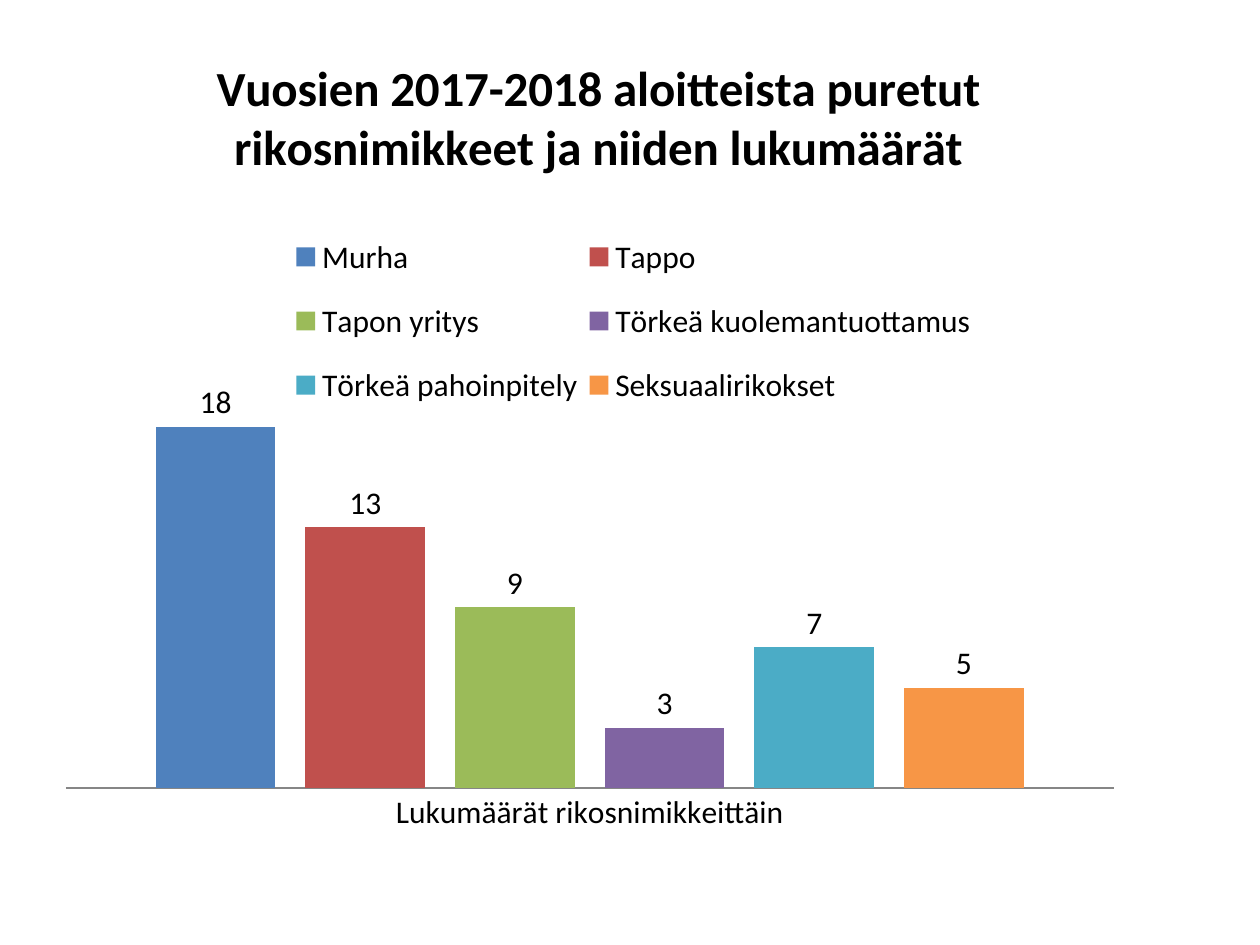
from dataclasses import dataclass

from pptx import Presentation
from pptx.chart.data import CategoryChartData
from pptx.dml.color import RGBColor
from pptx.enum.chart import (XL_CHART_TYPE, XL_LABEL_POSITION,
                             XL_LEGEND_POSITION, XL_TICK_MARK)
from pptx.oxml.ns import qn
from pptx.util import Cm, Pt
from lxml.etree import SubElement, Element

TITLE = "Vuosien 2017-2018 aloitteista puretut rikosnimikkeet ja niiden lukumäärät"
CATEGORY = "Lukumäärät rikosnimikkeittäin"
CRIMES = [
    ("Murha", 18, "4F81BD"),
    ("Tappo", 13, "C0504D"),
    ("Tapon yritys", 9, "9BBB59"),
    ("Törkeä kuolemantuottamus", 3, "8064A2"),
    ("Törkeä pahoinpitely", 7, "4BACC6"),
    ("Seksuaalirikokset", 5, "F79646"),
]


@dataclass(frozen=True)
class Theme:
    font: str = "Calibri"
    text: str = "000000"
    axis: str = "868686"
    title_size: int = 28
    body_size: int = 18


THEME = Theme()


def style_font(font, size, bold=False):
    font.name = THEME.font
    font.size = Pt(size)
    font.bold = bold
    font.color.rgb = RGBColor.from_string(THEME.text)


def write(tf, text, size=THEME.body_size, bold=False):
    p = tf.paragraphs[0]
    r = p.add_run()
    r.text = text
    style_font(r.font, size, bold)


def set_layout(parent, index, target=None, **box):
    for old in parent.findall(qn("c:layout")):
        parent.remove(old)
    layout = Element(qn("c:layout"))
    manual = SubElement(layout, qn("c:manualLayout"))
    if target:
        SubElement(manual, qn("c:layoutTarget")).set("val", target)
    for side in ("x", "y"):
        SubElement(manual, qn(f"c:{side}Mode")).set("val", "edge")
    for side, value in box.items():
        SubElement(manual, qn(f"c:{side}")).set("val", str(value))
    parent.insert(index, layout)


def add_crime_chart(s):
    data = CategoryChartData()
    data.categories = [CATEGORY]
    for name, count, _ in CRIMES:
        data.add_series(name, [count])
    chart = s.shapes.add_chart(XL_CHART_TYPE.COLUMN_CLUSTERED, Cm(0.89), Cm(-0.48),
                               Cm(22), Cm(17.6), data).chart
    style_font(chart.font, THEME.body_size)

    chart.has_title = True
    write(chart.chart_title.text_frame, TITLE, size=THEME.title_size, bold=True)
    set_layout(chart.chart_title._element, 1, x=0.15, y=0.08)

    chart.has_legend = True
    legend = chart.legend
    legend.position = XL_LEGEND_POSITION.TOP
    legend.include_in_layout = False
    style_font(legend.font, THEME.body_size)
    set_layout(legend._element, 1, x=0.22, y=0.27, w=0.64, h=0.25)

    plot = chart.plots[0]
    plot.gap_width = 150
    plot.overlap = -25
    plot.vary_by_categories = False
    for series, (_, _, color) in zip(plot.series, CRIMES):
        series.format.fill.solid()
        series.format.fill.fore_color.rgb = RGBColor.from_string(color)
        labels = series.data_labels
        labels.show_value = True
        labels.position = XL_LABEL_POSITION.OUTSIDE_END
        style_font(labels.font, THEME.body_size)
    set_layout(chart._chartSpace.chart.plotArea, 0, "inner",
               x=0.02, y=0.47, w=0.96, h=0.46)

    cat = chart.category_axis
    cat.major_tick_mark = XL_TICK_MARK.NONE
    cat.format.line.color.rgb = RGBColor.from_string(THEME.axis)
    style_font(cat.tick_labels.font, THEME.body_size)
    val = chart.value_axis
    val.minimum_scale, val.maximum_scale = 0, 20
    val.has_major_gridlines = False
    val.visible = False


def main():
    prs = Presentation()
    prs.slide_width, prs.slide_height = Cm(25.4), Cm(19.05)
    s = prs.slides.add_slide(prs.slide_layouts[6])
    add_crime_chart(s)
    prs.save("out.pptx")


if __name__ == "__main__":
    main()
